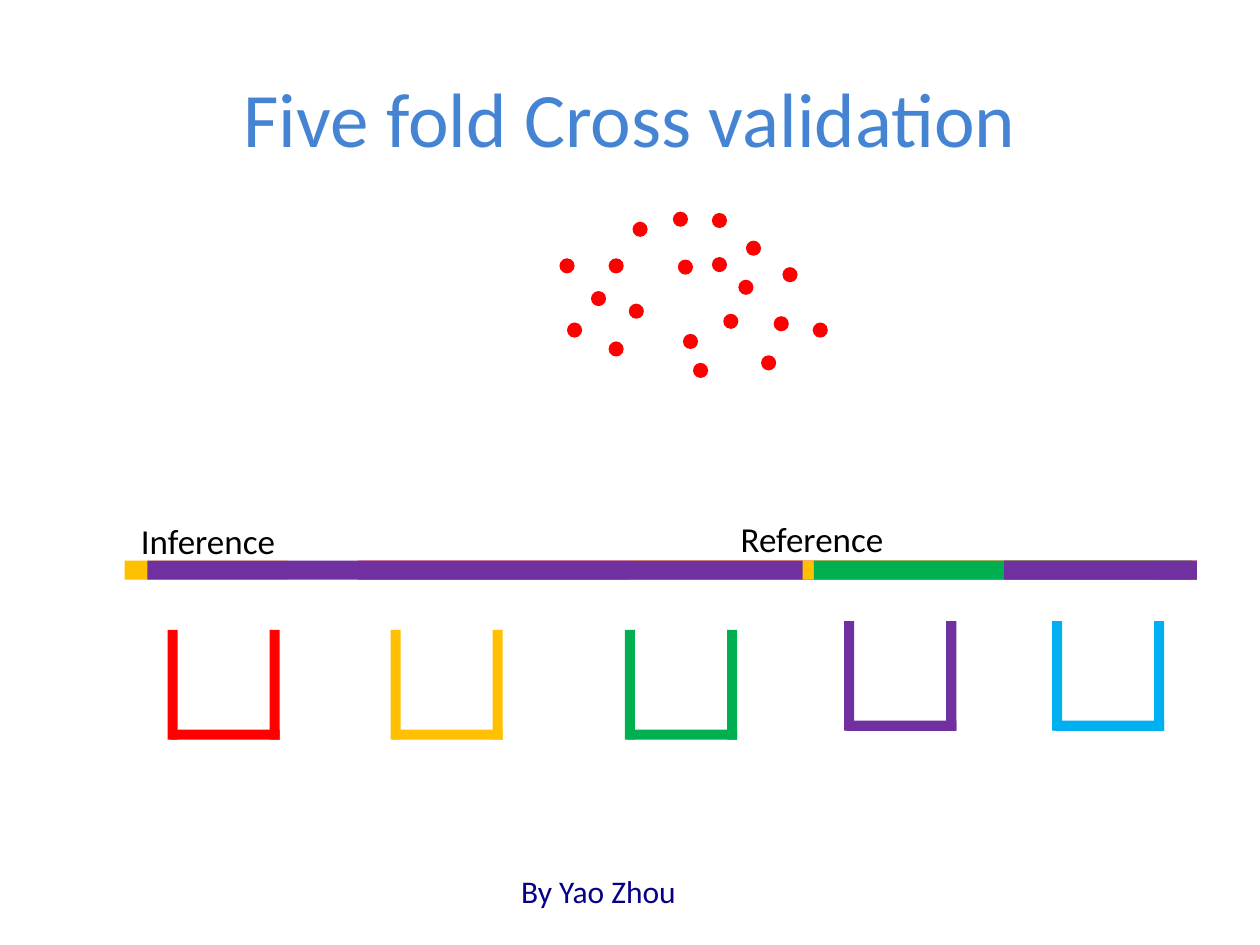
from pptx import Presentation, util as u
from pptx.dml.color import RGBColor
from pptx.enum import shapes, text

COLORS = {"title": "4584D3", "label": "000000", "author": "060087", "red": "FF0000",
          "yellow": "FFC000", "green": "00B050", "purple": "7030A0", "blue": "00B0F0"}

TITLE = ("Five fold Cross validation", (0.5, 0.3, 9, 1.25), 44, "title", "CENTER")
LABELS = [
    ("Reference", (4.63, 4.06, 3.63, 0.44), 20, "label", "CENTER"),
    ("Inference", (1.02, 4.07, 1.71, 0.44), 20, "label", "LEFT"),
    ("By Yao Zhou", (2.25, 6.87, 5, 0.4), 18, "author", "CENTER"),
]
SAMPLES = [
    (4.83, 2.05), (4.69, 2.31), (4.44, 2.05), (4.83, 2.71), (4.99, 2.41),
    (5.38, 2.06), (5.34, 1.68), (6.45, 2.56), (5.65, 1.69), (6.21, 2.12),
    (5.65, 2.04), (6.14, 2.51), (5.92, 1.91), (5.86, 2.22), (6.04, 2.82),
    (5.42, 2.65), (5.02, 1.76), (4.5, 2.56), (5.5, 2.88), (5.74, 2.49),
]
FOLDS = [(1.33, 5, "red"), (3.1, 5, "yellow"), (4.96, 5, "green"),
         (6.7, 4.93, "purple"), (8.35, 4.93, "blue")]
SEGMENTS = [(2.84, 6.66, "red"), (4.98, 4.17, "yellow"), (0.99, 1.3, "yellow"),
            (6.46, 3, "green"), (1.17, 5.2, "purple"), (7.97, 1.53, "purple")]
SAMPLE_SIZE = 0.12
SEGMENT_TOP, SEGMENT_HEIGHT = 4.45, 0.15
FOLD_SIDE, FOLD_WALL, FOLD_INSET = 0.87, 0.08, 0.02


def inches(box):
    return [u.Inches(length) for length in box]


def add_block(slide, kind, box, color):
    block = slide.shapes.add_shape(kind, *inches(box))
    block.shadow.inherit = False
    block.fill.solid()
    block.fill.fore_color.rgb = RGBColor.from_string(COLORS[color])
    block.line.fill.background()


def write(holder, wording, box, size, color, align):
    for side, length in zip(("left", "top", "width", "height"), inches(box)):
        setattr(holder, side, length)
    frame = holder.text_frame
    frame.word_wrap = True
    frame.text = wording
    paragraph = frame.paragraphs[0]
    paragraph.alignment = text.PP_ALIGN[align]
    for name, value in {"name": "Calibri", "size": u.Pt(size)}.items():
        setattr(paragraph.font, name, value)
    paragraph.font.color.rgb = RGBColor.from_string(COLORS[color])


def add_fold(slide, left, top, color):
    right = left + FOLD_INSET + FOLD_SIDE - FOLD_WALL
    base = top + FOLD_SIDE - FOLD_WALL
    for box in [(left, top, FOLD_WALL, FOLD_SIDE),
                (left + FOLD_INSET, base, FOLD_SIDE, FOLD_WALL),
                (right, top, FOLD_WALL, FOLD_SIDE)]:
        add_block(slide, shapes.MSO_SHAPE.RECTANGLE, box, color)


def main():
    deck = Presentation()
    deck.slide_width, deck.slide_height = inches((10, 7.5))
    slide = deck.slides.add_slide(deck.slide_layouts[5])
    write(slide.shapes.title, *TITLE)
    slide.shapes.title.text_frame.vertical_anchor = text.MSO_ANCHOR.MIDDLE
    for left, top in SAMPLES:
        add_block(slide, shapes.MSO_SHAPE.OVAL, (left, top, SAMPLE_SIZE, SAMPLE_SIZE), "red")
    for fold in FOLDS:
        add_fold(slide, *fold)
    for left, width, color in SEGMENTS:
        add_block(slide, shapes.MSO_SHAPE.RECTANGLE,
                  (left, SEGMENT_TOP, width, SEGMENT_HEIGHT), color)
    for label in LABELS:
        holder = slide.shapes.add_textbox(*inches(label[1]))
        write(holder, *label)
        holder.text_frame.auto_size = text.MSO_AUTO_SIZE.SHAPE_TO_FIT_TEXT
    deck.save("out.pptx")


if __name__ == "__main__":
    main()
